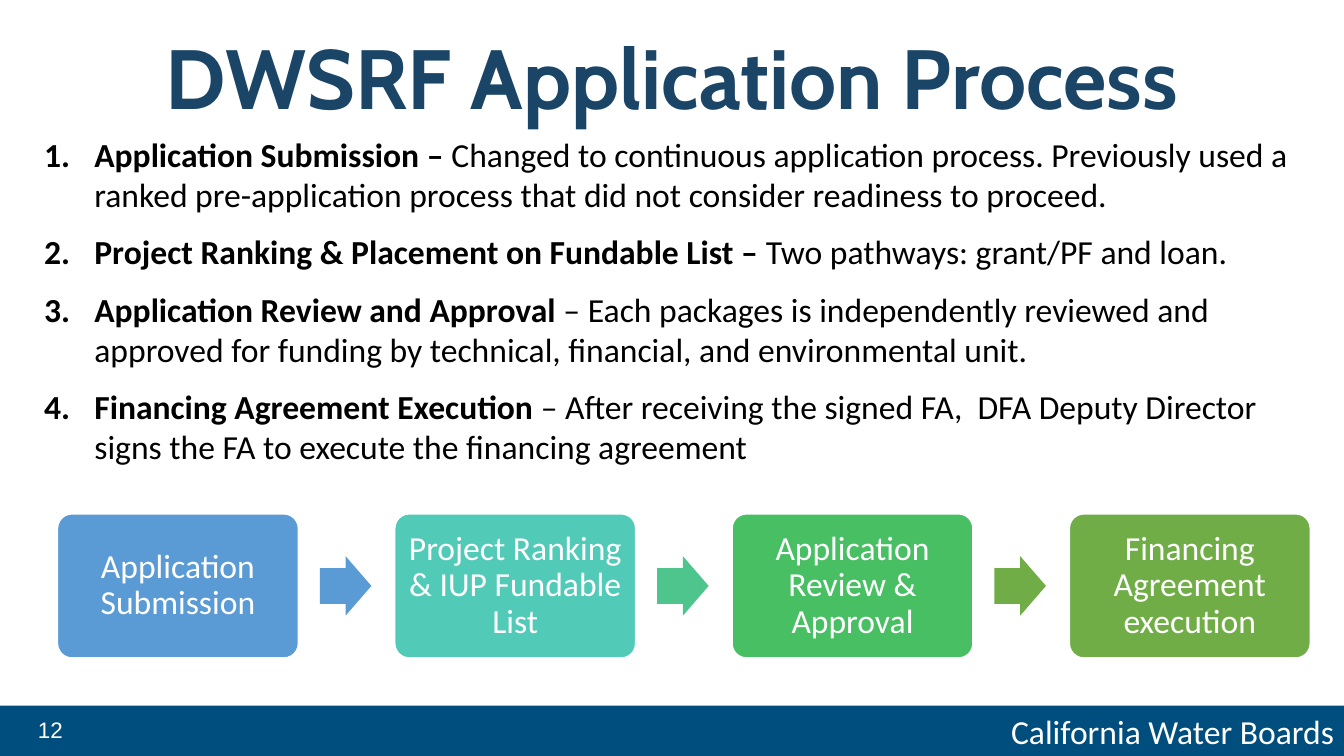
from lxml import etree
from pptx import Presentation
from pptx.dml.color import RGBColor
from pptx.enum import shapes, text
from pptx.oxml.ns import qn
from pptx.util import Cm, Pt

# Content
TITLE = "DWSRF Application Process"
POINTS = [
    ("Application Submission – ",
     "Changed to continuous application process. Previously used a ranked "
     "pre-application process that did not consider readiness to proceed."),
    ("Project Ranking & Placement on Fundable List – ",
     "Two pathways: grant/PF and loan."),
    ("Application Review and Approval",
     " – Each packages is independently reviewed and approved for funding by "
     "technical, financial, and environmental unit."),
    ("Financing Agreement Execution ",
     "– After receiving the signed FA,  DFA Deputy Director signs the FA to "
     "execute the financing agreement"),
]
STEPS = [  # label, box colour, colour of the arrow that follows
    ("Application Submission", "blue", "blue"),
    ("Project Ranking & IUP Fundable List", "teal", "mint"),
    ("Application Review & Approval", "green", "olive"),
    ("Financing Agreement execution", "olive", None),
]
FOOTER, NUMBER = "California Water Boards", "12"
HEX = {
    "navy": "1A4566", "bar": "004E7D", "white": "FFFFFF", "black": "000000",
    "blue": "5B9BD5", "teal": "52CAB8", "mint": "4DC58D",
    "green": "49BF64", "olive": "70AD47",
}
LEFT, CENTER, RIGHT = (text.PP_ALIGN.LEFT, text.PP_ALIGN.CENTER,
                       text.PP_ALIGN.RIGHT)
KIND = shapes.MSO_SHAPE

deck = Presentation()
deck.slide_width, deck.slide_height = Cm(33.87), Cm(19.05)
slide = deck.slides.add_slide(deck.slide_layouts[6])


def tint(name):
    return RGBColor.from_string(HEX[name])


def write(shape, paras, size=24, font="Calibri", color="white", bold=False,
          align=CENTER, line=None, after=0, pad=None, middle=True,
          number=False):
    """Fill a shape with paragraphs, each a list of (words, bold) or a string."""
    frame = shape.text_frame
    frame.word_wrap = True
    frame.vertical_anchor = (text.MSO_ANCHOR.MIDDLE if middle
                             else text.MSO_ANCHOR.TOP)
    if pad is not None:
        frame.margin_left = frame.margin_right = Cm(pad)
        frame.margin_top = frame.margin_bottom = Cm(pad)
    for i, runs in enumerate(paras):
        para = frame.add_paragraph() if i else frame.paragraphs[0]
        para.alignment, para.space_after = align, Pt(after)
        if line:
            para.line_spacing = line
        if number:
            props = para._p.get_or_add_pPr()
            props.set("marL", str(Cm(1.27)))
            props.set("indent", str(-Cm(1.27)))
            etree.SubElement(props, qn("a:buFont"), typeface="+mj-lt")
            etree.SubElement(props, qn("a:buAutoNum"), type="arabicPeriod")
        for words, heavy in [(runs, bold)] if isinstance(runs, str) else runs:
            run = para.add_run()
            run.text = words
            run.font.size, run.font.name = Pt(size), font
            run.font.bold, run.font.color.rgb = heavy, tint(color)


def label(x, y, w, h, paras, **form):
    write(slide.shapes.add_textbox(Cm(x), Cm(y), Cm(w), Cm(h)), paras, **form)


def block(kind, x, y, w, h, fill, edge=None, adjust=()):
    shape = slide.shapes.add_shape(kind, Cm(x), Cm(y), Cm(w), Cm(h))
    shape.shadow.inherit = False
    shape.fill.solid()
    shape.fill.fore_color.rgb = tint(fill)
    if edge:
        shape.line.color.rgb, shape.line.width = tint(edge), Pt(1)
    else:
        shape.line.fill.background()
    for i, value in enumerate(adjust):
        shape.adjustments[i] = value
    return shape


# Footer bar and slide number
bar = block(KIND.RECTANGLE, 0, 17.78, 33.87, 1.27, "bar")
write(bar, [FOOTER], align=RIGHT)
label(0, 17.78, 2.54, 1.27, [NUMBER], size=16, font="Arial", line=0.9, after=6)

# Title and numbered points
label(2.16, 0.58, 29.54, 2.97, [TITLE], size=60, font="Cabin", color="navy",
      bold=True, line=0.9)
label(0.86, 3.25, 32.11, 10.52,
      [[(head, True), (rest, False)] for head, rest in POINTS],
      color="black", align=LEFT, after=12, middle=False, number=True)

# Process row: boxes at an equal pitch, an arrow in each gap
START, TOP, PITCH, WIDE, HIGH = 1.45, 12.95, 8.5, 6.07, 3.63
ARROW_W, ARROW_H, GAP = 1.3, 1.5, 0.54
for i, (name, fill, arrow) in enumerate(STEPS):
    x = START + i * PITCH
    box = block(KIND.ROUNDED_RECTANGLE, x, TOP, WIDE, HIGH, fill, "white",
                [0.1])
    write(box, [name], line=0.9, pad=0.25)
    if arrow:
        block(KIND.RIGHT_ARROW, x + WIDE + GAP, TOP + (HIGH - ARROW_H) / 2,
              ARROW_W, ARROW_H, arrow, adjust=[0.6, 0.5])

deck.save("out.pptx")
